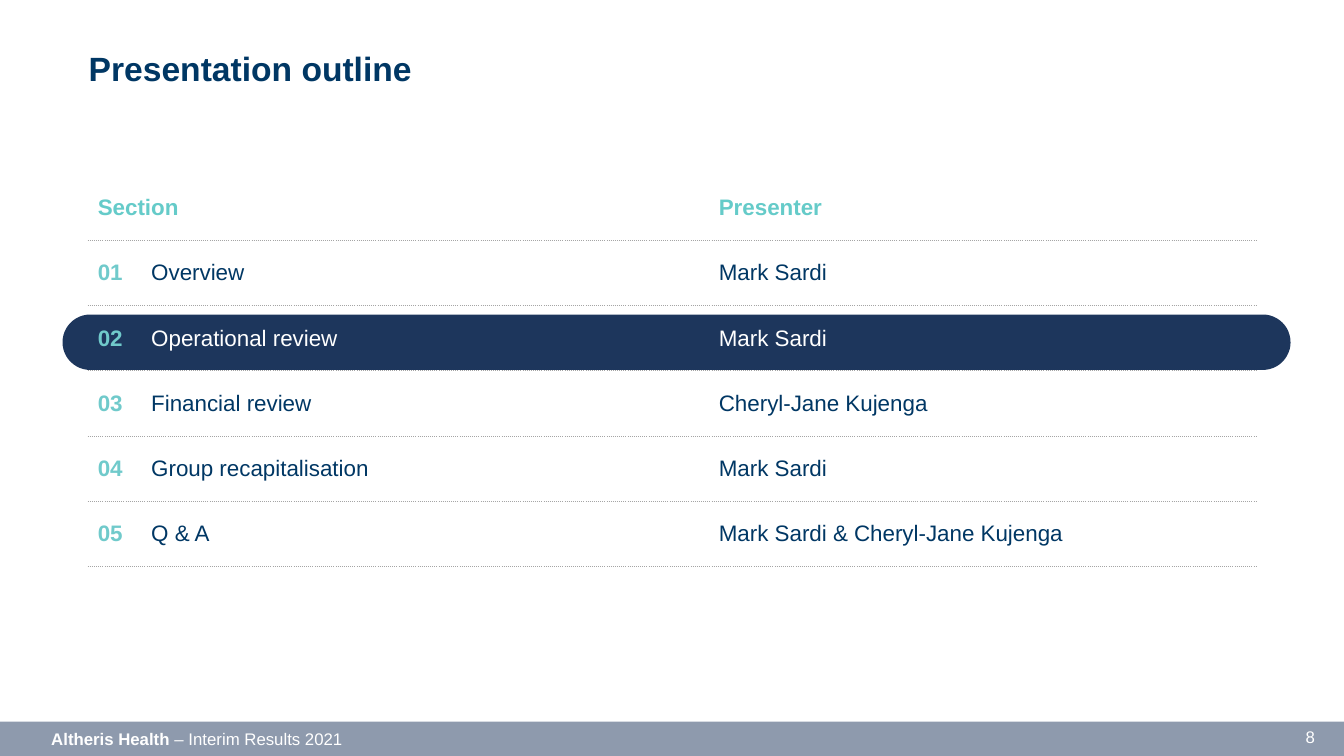
from lxml import etree
from pptx import Presentation
from pptx.dml.color import RGBColor
from pptx.enum.shapes import MSO_SHAPE
from pptx.enum.text import MSO_ANCHOR, MSO_AUTO_SIZE, PP_ALIGN
from pptx.oxml.ns import qn
from pptx.util import Inches, Pt

RECT, PILL = MSO_SHAPE.RECTANGLE, MSO_SHAPE.ROUNDED_RECTANGLE
MIDDLE, BOTTOM = MSO_ANCHOR.MIDDLE, MSO_ANCHOR.BOTTOM
LEFT, RIGHT = PP_ALIGN.LEFT, PP_ALIGN.RIGHT
FONT = "Arial"
COLORS = {
    "white": "FFFFFF", "navy": "003764", "pill": "1D365C", "teal": "65CBC9",
    "number": "70CACB", "bar": "8E9AAD", "rule": "A5A5A5",
}
AGENDA = [
    ("Overview", "Mark Sardi"),
    ("Operational review", "Mark Sardi"),
    ("Financial review", "Cheryl-Jane Kujenga"),
    ("Group recapitalisation", "Mark Sardi"),
    ("Q & A", "Mark Sardi & Cheryl-Jane Kujenga"),
]
ACTIVE = 2
WIDTHS = (0.53, 5.63, 5.44)
ROW = 0.64


class Deck:
    def __init__(self):
        self.prs = Presentation()
        self.prs.slide_width = Inches(13.33)
        self.prs.slide_height = Inches(7.5)
        self.slide = self.prs.slides.add_slide(self.prs.slide_layouts[5])

    def style(self, run, size, color, bold=False):
        run.font.name = FONT
        run.font.size = Pt(size)
        run.font.bold = bold
        run.font.color.rgb = RGBColor.from_string(COLORS[color])

    def title(self, text, *box):
        shape = self.slide.shapes.title
        shape.left, shape.top, shape.width, shape.height = map(Inches, box)
        frame = shape.text_frame
        frame.text = text
        frame.word_wrap = True
        frame.auto_size = MSO_AUTO_SIZE.NONE
        frame.vertical_anchor = BOTTOM
        frame.margin_left = frame.margin_right = 0
        frame.margin_top = frame.margin_bottom = 0
        frame.paragraphs[0].alignment = LEFT
        self.style(frame.paragraphs[0].runs[0], 24, "navy", True)

    def block(self, kind, color, *box):
        shape = self.slide.shapes.add_shape(kind, *map(Inches, box))
        shape.shadow.inherit = False
        shape.fill.solid()
        shape.fill.fore_color.rgb = RGBColor.from_string(COLORS[color])
        shape.line.fill.background()
        return shape

    def label(self, parts, align, *box):
        frame = self.slide.shapes.add_textbox(*map(Inches, box)).text_frame
        frame.word_wrap = True
        para = frame.paragraphs[0]
        para.alignment = align
        for text, bold in parts:
            run = para.add_run()
            run.text = text
            self.style(run, 12, "white", bold)

    def border(self, cell, side, drawn):
        props = cell._tc.get_or_add_tcPr()
        line = etree.SubElement(props, qn(f"a:ln{side}"), w=str(Pt(0.75)))
        if not drawn:
            etree.SubElement(line, qn("a:noFill"))
            return
        fill = etree.SubElement(line, qn("a:solidFill"))
        etree.SubElement(fill, qn("a:srgbClr"), val=COLORS["rule"])
        etree.SubElement(line, qn("a:prstDash"), val="sysDot")

    def cell(self, cell, text, color, bold, first):
        for side in "LRTB":
            self.border(cell, side, side == "B" or (side == "T" and not first))
        cell.fill.background()
        cell.vertical_anchor = MIDDLE
        cell.margin_left = cell.margin_right = Inches(0.1)
        cell.margin_top = cell.margin_bottom = Inches(0.19)
        para = cell.text_frame.paragraphs[0]
        para.text = text
        para.space_after = Pt(3)
        para.font.size = Pt(16)
        for run in para.runs:
            self.style(run, 16, color, bold)

    def table(self, rows, left, top):
        frame = self.slide.shapes.add_table(
            len(rows), len(WIDTHS), Inches(left), Inches(top),
            Inches(sum(WIDTHS)), Inches(ROW * len(rows)))
        grid = frame.table
        grid.first_row = grid.horz_banding = False
        for col, width in zip(grid.columns, WIDTHS):
            col.width = Inches(width)
        for r, row in enumerate(rows):
            grid.rows[r].height = Inches(ROW)
            for c, (text, color, bold) in enumerate(row):
                self.cell(grid.cell(r, c), text, color, bold, r == 0)
        grid.cell(0, 0).merge(grid.cell(0, 1))


def main():
    deck = Deck()

    # Footer
    deck.block(RECT, "bar", 0, 7.16, 13.33, 0.35)
    deck.label([("8", False)], RIGHT, 9.51, 7.16, 3.63, 0.3)
    deck.label([("Altheris Health", True), (" – Interim Results 2021", False)],
               LEFT, 0.41, 7.18, 5.92, 0.3)

    # Title and highlight of the active section
    deck.title("Presentation outline", 0.88, 0.41, 11.6, 0.47)
    pill = deck.block(PILL, "pill", 0.62, 3.12, 12.18, 0.55)
    pill.adjustments[0] = 0.5

    # Agenda
    rows = [[(text, "teal", True) for text in ("Section", "", "Presenter")]]
    for num, (topic, name) in enumerate(AGENDA, 1):
        color = "white" if num == ACTIVE else "navy"
        rows.append([(f"{num:02}", "number", True),
                     (topic, color, False), (name, color, False)])
    deck.table(rows, 0.87, 1.74)

    deck.prs.save("out.pptx")


if __name__ == "__main__":
    main()
